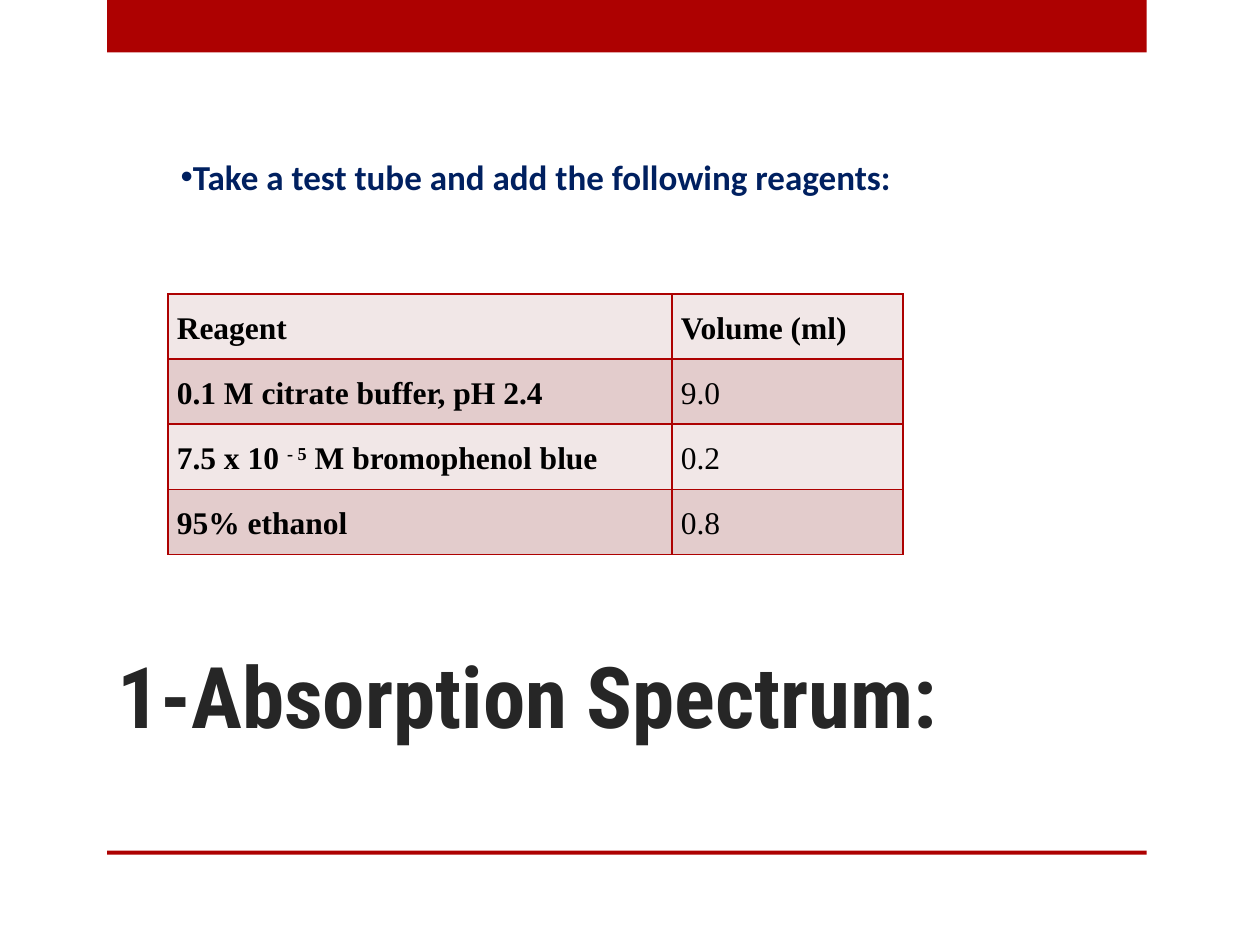
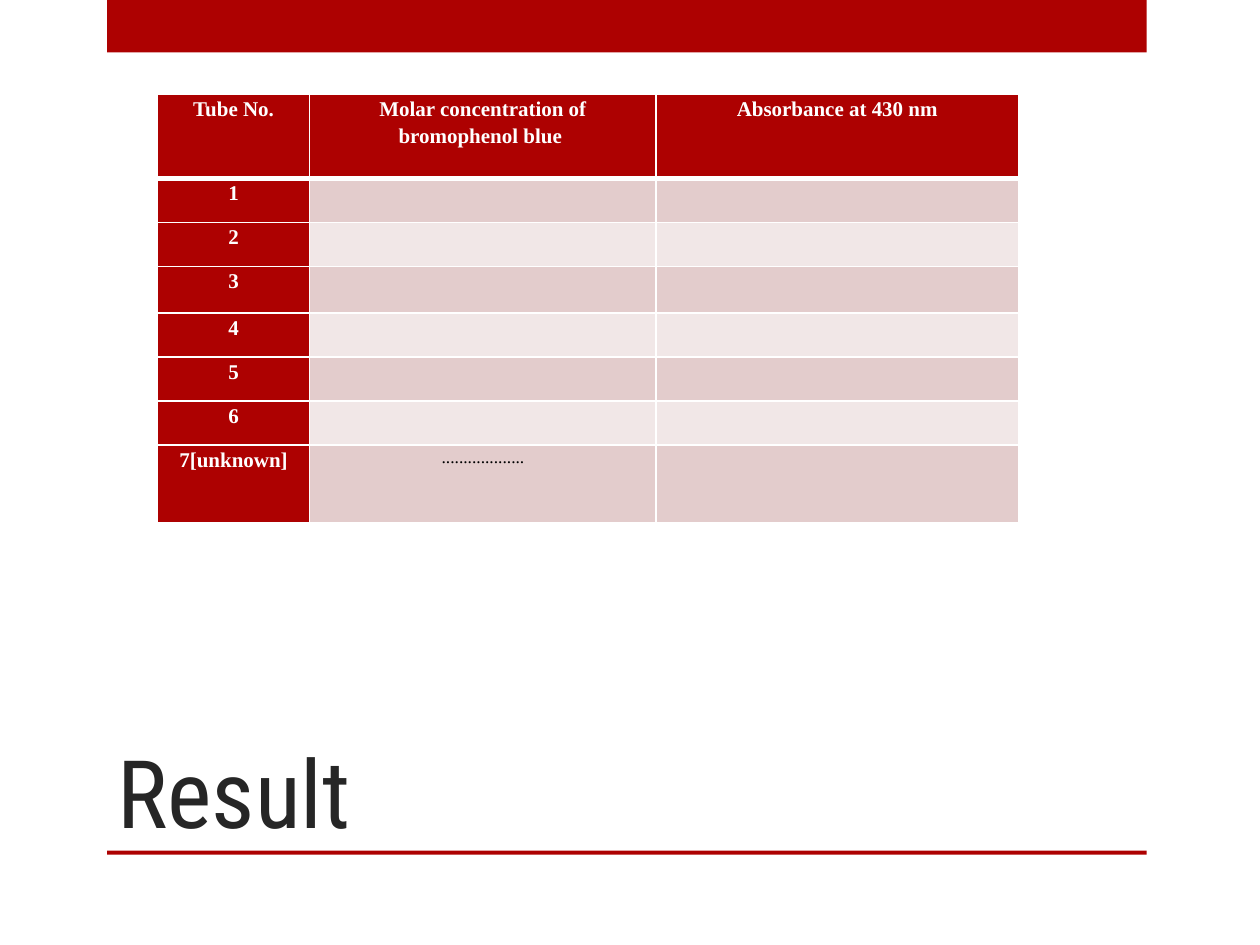
from lxml.etree import SubElement
from pptx import Presentation
from pptx.dml.color import RGBColor
from pptx.enum.shapes import MSO_SHAPE
from pptx.enum.text import MSO_ANCHOR, MSO_AUTO_SIZE, PP_ALIGN
from pptx.oxml.ns import qn
from pptx.util import Emu, Inches, Pt

COLORS = {
    "red": "AD0101",
    "rose": "E3CCCC",
    "pale": "F1E7E7",
    "white": "FFFFFF",
    "black": "000000",
    "heading": "262626",
    "navy": "002060",
}
HEADING_FONT = "Roboto Condensed"
LIST_FONT = "Calibri"
TABLE_FONT = "Times New Roman"
COLUMNS, ROWS = 120, 90  # the slide as a grid of twelfths of an inch
TITLE_AND_CONTENT, TITLE_ONLY = 1, 5


def grid(*counts):
    """Turn grid counts into lengths."""
    return [Emu(round(count * Inches(1) / 12)) for count in counts]


def rgb(name):
    return RGBColor.from_string(COLORS[name])


def place(shape, left, top, width, height):
    shape.left, shape.top, shape.width, shape.height = grid(left, top, width, height)


def write_text(frame, text, *, font, size, color, bold=False,
               align=PP_ALIGN.LEFT, spacing=1.0):
    """Write one paragraph per line; text between carets is superscript."""
    for index, line in enumerate(text.split("\n")):
        paragraph = frame.paragraphs[0] if index == 0 else frame.add_paragraph()
        paragraph.alignment = align
        paragraph.line_spacing = spacing
        paragraph.space_before = Pt(0)
        if not line:
            SubElement(paragraph._p, qn("a:endParaRPr"), sz=str(size * 100))
            continue
        for part_index, part in enumerate(line.split("^")):
            run = paragraph.add_run()
            run.text = part
            run.font.name = font
            run.font.size = Pt(size)
            run.font.bold = bold
            run.font.color.rgb = rgb(color)
            if part_index % 2:
                run._r.get_or_add_rPr().set("baseline", "30000")


def add_master_band(prs, slide, number, top, height):
    """Draw a red band and move it behind everything on the master."""
    band = slide.shapes.add_shape(MSO_SHAPE.RECTANGLE, *grid(10.2, top, 99, height))
    band.shadow.inherit = False
    band.fill.solid()
    band.fill.fore_color.rgb = rgb("red")
    band.line.fill.background()
    band.element.nvSpPr.cNvPr.id = 100 + number
    prs.slide_master.shapes.element.insert(2, band.element)


def style_master(prs, slide):
    for number, (top, height) in enumerate([(0, 5), (81, 0.4)]):
        add_master_band(prs, slide, number, top, height)
    title = prs.slide_master.placeholders[0]
    place(title, 10, 60, 89, 21)
    title.text_frame.vertical_anchor = MSO_ANCHOR.BOTTOM
    title.text_frame.auto_size = MSO_AUTO_SIZE.NONE


def set_title(slide, text, size, bold=False, space_below=0.25):
    frame = slide.shapes.title.text_frame
    frame.margin_bottom, = grid(space_below)
    write_text(frame, text, font=HEADING_FONT, size=size, color="heading", bold=bold)


def set_instruction(slide, text):
    """Put a bulleted line in the body placeholder."""
    body = slide.placeholders[1]
    place(body, 16, 14.2, 71.2, 7.4)
    frame = body.text_frame
    frame.auto_size = MSO_AUTO_SIZE.NONE
    frame.vertical_anchor = MSO_ANCHOR.TOP
    write_text(frame, text, font=LIST_FONT, size=20, color="navy", bold=True)
    properties = frame.paragraphs[0]._p.get_or_add_pPr()
    properties.set("marL", "0")
    properties.set("indent", "0")
    SubElement(properties, qn("a:buFont"), typeface="Arial")
    SubElement(properties, qn("a:buChar"), char="•")


def set_borders(cell, color, bottom=1):
    """Line all four sides; must run before the cell is filled."""
    properties = cell._tc.get_or_add_tcPr()
    for side, width in {"L": 1, "R": 1, "T": 1, "B": bottom}.items():
        line = SubElement(properties, qn(f"a:ln{side}"), w=str(Pt(width)))
        fill = SubElement(line, qn("a:solidFill"))
        SubElement(fill, qn("a:srgbClr"), val=COLORS[color])


def fill_cell(cell, text, fill, border, border_bottom=1, **text_format):
    set_borders(cell, border, border_bottom)
    cell.fill.solid()
    cell.fill.fore_color.rgb = rgb(fill)
    cell.margin_left = cell.margin_right = Inches(0.07)
    cell.margin_top = cell.margin_bottom = 0
    write_text(cell.text_frame, text, font=TABLE_FONT, **text_format)


def add_plain_table(slide, left, top, widths, heights):
    table = slide.shapes.add_table(
        len(heights), len(widths), *grid(left, top, sum(widths), sum(heights))
    ).table
    table.first_row = table.horz_banding = False
    for column, width in zip(table.columns, grid(*widths)):
        column.width = width
    for row, height in zip(table.rows, grid(*heights)):
        row.height = height
    return table


def add_reagent_table(slide):
    reagents = [
        ("Reagent", "Volume (ml)"),
        ("0.1 M citrate buffer, pH 2.4", "9.0"),
        ("7.5 x 10 ^- 5^ M bromophenol blue", "0.2"),
        ("95% ethanol", "0.8"),
    ]
    table = add_plain_table(slide, 16, 28, [48, 22], [6.2] * len(reagents))
    for r, entry in enumerate(reagents):
        for c, text in enumerate(entry):
            fill_cell(table.cell(r, c), text, "rose" if r % 2 else "pale", "red",
                      size=18, color="black", bold=r == 0 or c == 0, spacing=1.5)


def add_result_table(slide):
    headings = ("Tube No.", "Molar concentration of\nbromophenol blue ",
                "Absorbance at 430 nm")
    tubes = [(str(number), "", "") for number in range(1, 7)]
    unknown = ("7[unknown]", "." * 19, "")
    heights = [8, 4.2, 4.2, 4.4, 4.2, 4.2, 4.2, 7.4]
    table = add_plain_table(slide, 15, 9, [14.5, 33, 34.5], heights)
    for r, entry in enumerate([headings, *tubes, unknown]):
        for c, text in enumerate(entry):
            is_label = r == 0 or c == 0
            band = "rose" if r % 2 else "pale"
            fill_cell(table.cell(r, c), text, "red" if is_label else band, "white",
                      border_bottom=3 if r == 0 else 1,
                      size=12 if is_label else 10,
                      color="white" if is_label else "black",
                      bold=is_label, align=PP_ALIGN.CENTER, spacing=1.15)


def main():
    prs = Presentation()
    prs.slide_width, prs.slide_height = grid(COLUMNS, ROWS)

    spectrum = prs.slides.add_slide(prs.slide_layouts[TITLE_AND_CONTENT])
    style_master(prs, spectrum)
    set_title(spectrum, "1-Absorption Spectrum:", 48.6, bold=True, space_below=10)
    set_instruction(spectrum, "Take a test tube and add the following reagents:")
    add_reagent_table(spectrum)

    result = prs.slides.add_slide(prs.slide_layouts[TITLE_ONLY])
    set_title(result, "Result", 54)
    add_result_table(result)

    prs.save("out.pptx")


if __name__ == "__main__":
    main()
